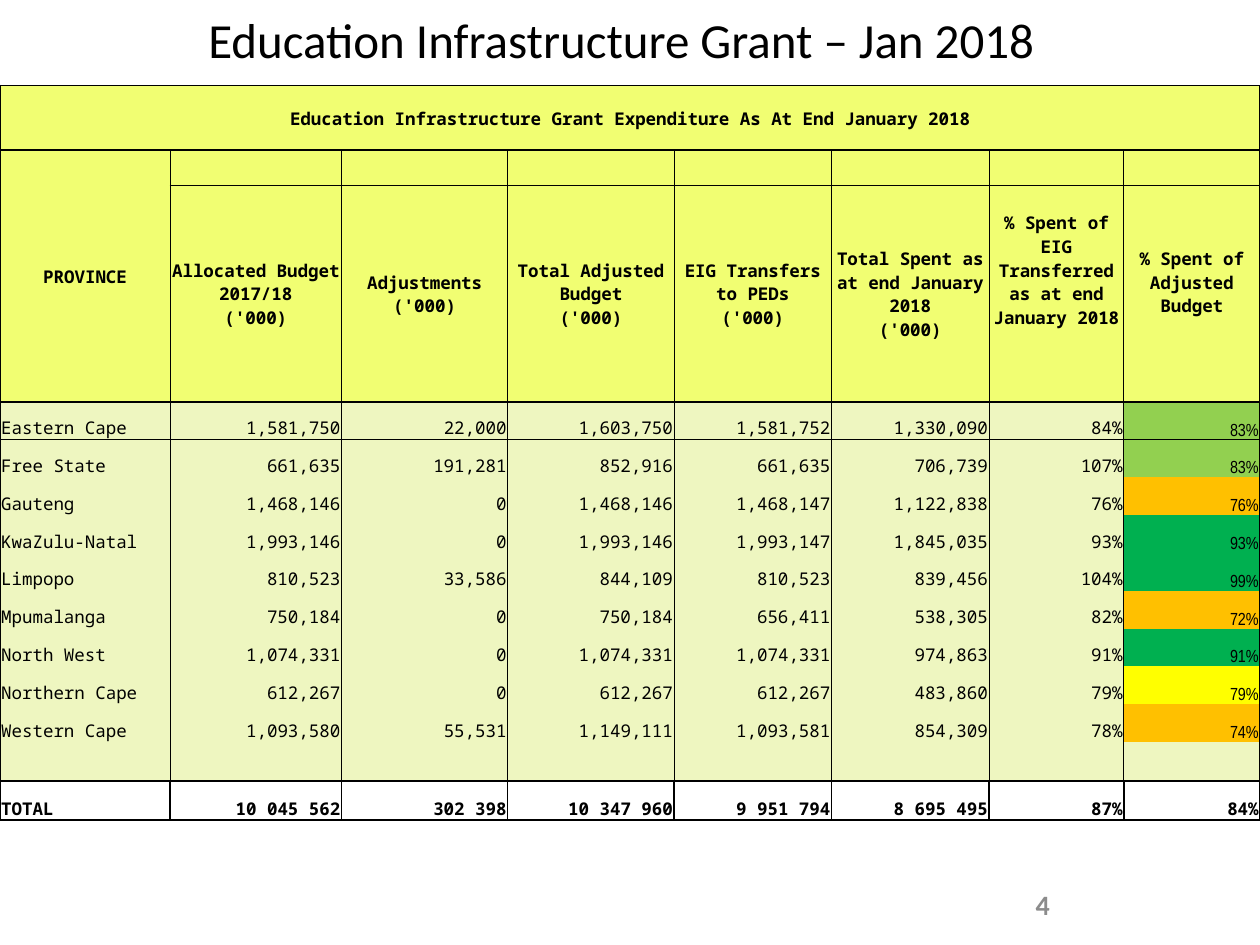
from lxml.etree import SubElement
from pptx import Presentation
from pptx.dml.color import RGBColor
from pptx.enum.text import MSO_ANCHOR as Anchor, PP_ALIGN as Align
from pptx.oxml.ns import qn
from pptx.util import Inches, Pt

COLORS = {
    "black": "000000", "white": "FFFFFF", "gray": "8C8C8C",
    "header": "F1FE72", "body": "EEF6C0",
    "light green": "92D050", "orange": "FFC000", "green": "00B050", "yellow": "FFFF00",
}
MONO = "Noto Sans Mono"
COLUMN_WIDTHS = [1.35, 1.36, 1.32, 1.32, 1.25, 1.25, 1.07, 1.08]
ROW_HEIGHTS = [0.51, 0.28, 1.72] + [0.3] * 9 + [0.31, 0.31]
HEADINGS = [
    "", "Allocated Budget\v2017/18\v('000)", "Adjustments\v('000)",
    "Total Adjusted\vBudget\v('000)", "EIG Transfers\vto PEDs\v('000)",
    "Total Spent as\vat end January\v2018\v('000)",
    "% Spent of\vEIG\vTransferred\vas at end\vJanuary 2018",
    "% Spent of\vAdjusted\vBudget",
]
PROVINCES = [
    ["Eastern Cape", "1,581,750", "22,000", "1,603,750", "1,581,752", "1,330,090", "84%", "83%"],
    ["Free State", "661,635", "191,281", "852,916", "661,635", "706,739", "107%", "83%"],
    ["Gauteng", "1,468,146", "0", "1,468,146", "1,468,147", "1,122,838", "76%", "76%"],
    ["KwaZulu-Natal", "1,993,146", "0", "1,993,146", "1,993,147", "1,845,035", "93%", "93%"],
    ["Limpopo", "810,523", "33,586", "844,109", "810,523", "839,456", "104%", "99%"],
    ["Mpumalanga", "750,184", "0", "750,184", "656,411", "538,305", "82%", "72%"],
    ["North West", "1,074,331", "0", "1,074,331", "1,074,331", "974,863", "91%", "91%"],
    ["Northern Cape", "612,267", "0", "612,267", "612,267", "483,860", "79%", "79%"],
    ["Western Cape", "1,093,580", "55,531", "1,149,111", "1,093,581", "854,309", "78%", "74%"],
]
RATINGS = ["light green", "light green", "orange", "green", "green",
           "orange", "green", "yellow", "orange"]
TOTALS = ["TOTAL", "10 045 562", "302 398", "10 347 960", "9 951 794", "8 695 495", "87%", "84%"]
ROWS = [
    ["Education Infrastructure Grant Expenditure As At End January 2018"] + [""] * 7,
    ["PROVINCE"] + [""] * 7, HEADINGS, *PROVINCES, [""] * 8, TOTALS,
]
LAST_ROW, LAST_COLUMN = len(ROWS) - 1, len(COLUMN_WIDTHS) - 1


def format_text(text_frame, font, size, color, align, bold=False):
    for paragraph in text_frame.paragraphs:
        paragraph.alignment = align
        for run in paragraph.runs:
            run.font.name = font
            run.font.size = Pt(size)
            run.font.bold = bold
            run.font.color.rgb = RGBColor.from_string(COLORS[color])


def add_border(cell, side, width):
    line = SubElement(cell._tc.get_or_add_tcPr(), qn(f"a:ln{side}"), w=str(Pt(width)))
    fill = SubElement(line, qn("a:solidFill"))
    SubElement(fill, qn("a:srgbClr"), val=COLORS["black"])


presentation = Presentation()
presentation.slide_width, presentation.slide_height = Inches(10), Inches(7.5)
slide = presentation.slides.add_slide(presentation.slide_layouts[5])

title = slide.shapes.title
title.left, title.top, title.width, title.height = map(Inches, (0.43, 0.04, 9, 0.54))
title.text_frame.text = "Education Infrastructure Grant – Jan 2018"
title.text_frame.vertical_anchor = Anchor.MIDDLE
format_text(title.text_frame, "Calibri", 28, "black", Align.CENTER)

page_number = slide.shapes.add_textbox(*map(Inches, (6.1, 6.98, 2.33, 0.4)))
page_number.text_frame.word_wrap = True
page_number.text_frame.vertical_anchor = Anchor.MIDDLE
page_number.text_frame.text = "4"
format_text(page_number.text_frame, "Calibri", 16, "gray", Align.RIGHT, True)

frame = slide.shapes.add_table(len(ROWS), len(COLUMN_WIDTHS), 0, Inches(0.68),
                               Inches(sum(COLUMN_WIDTHS)), Inches(sum(ROW_HEIGHTS)))
table = frame.table
table.first_row = table.horz_banding = False
table._tbl.tblPr.find(qn("a:tableStyleId")).text = "{2D5ABB26-0587-4C30-8999-92F81FD0307C}"
for column, width in zip(table.columns, COLUMN_WIDTHS):
    column.width = Inches(width)
for row, height in zip(table.rows, ROW_HEIGHTS):
    row.height = Inches(height)
table.cell(0, 0).merge(table.cell(0, LAST_COLUMN))
table.cell(1, 0).merge(table.cell(2, 0))

for r, texts in enumerate(ROWS):
    is_header, is_total = r < 3, r == LAST_ROW
    for c, text in enumerate(texts):
        cell = table.cell(r, c)
        if cell.is_spanned:
            continue
        is_rating = c == LAST_COLUMN and 3 <= r < 3 + len(RATINGS)
        cell.margin_left = cell.margin_right = cell.margin_top = Inches(0.01)
        cell.margin_bottom = 0
        cell.vertical_anchor = Anchor.MIDDLE if is_header else Anchor.BOTTOM

        side_width = 1 if r == 0 or is_total else 0.5
        add_border(cell, "L", 1 if c == 0 else side_width)
        add_border(cell, "R", 1 if c == LAST_COLUMN else side_width)
        if r <= 3 or is_total:
            add_border(cell, "T", 0.5 if r == 2 else 1)
        if r <= 2 or r >= LAST_ROW - 1:
            add_border(cell, "B", 0.5 if r == 1 and c > 0 else 1)

        fill = "header" if is_header else "white" if is_total else "body"
        cell.fill.solid()
        cell.fill.fore_color.rgb = RGBColor.from_string(COLORS[RATINGS[r - 3] if is_rating else fill])

        if text:
            cell.text_frame.text = text
            align = Align.CENTER if is_header else Align.RIGHT if c else Align.LEFT
            format_text(cell.text_frame, "Arial Narrow" if is_rating else MONO, 10,
                        "black", align, is_header or is_total)
        else:
            SubElement(cell.text_frame.paragraphs[0]._p, qn("a:endParaRPr"), sz="1000")

table.cell(2, 6).margin_bottom = Inches(0.38)
table.cell(2, 7).margin_bottom = Inches(0.19)

presentation.save("out.pptx")
